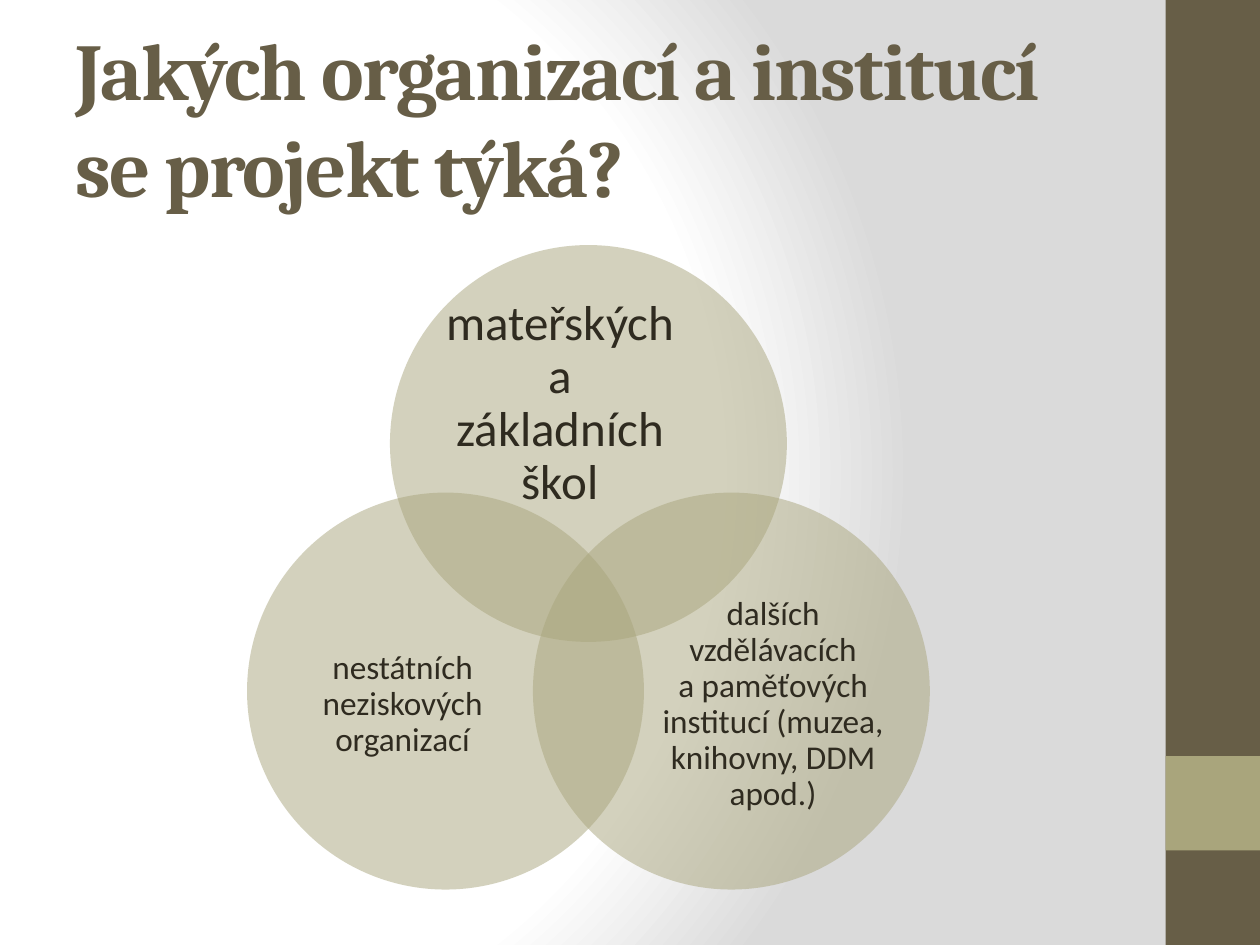
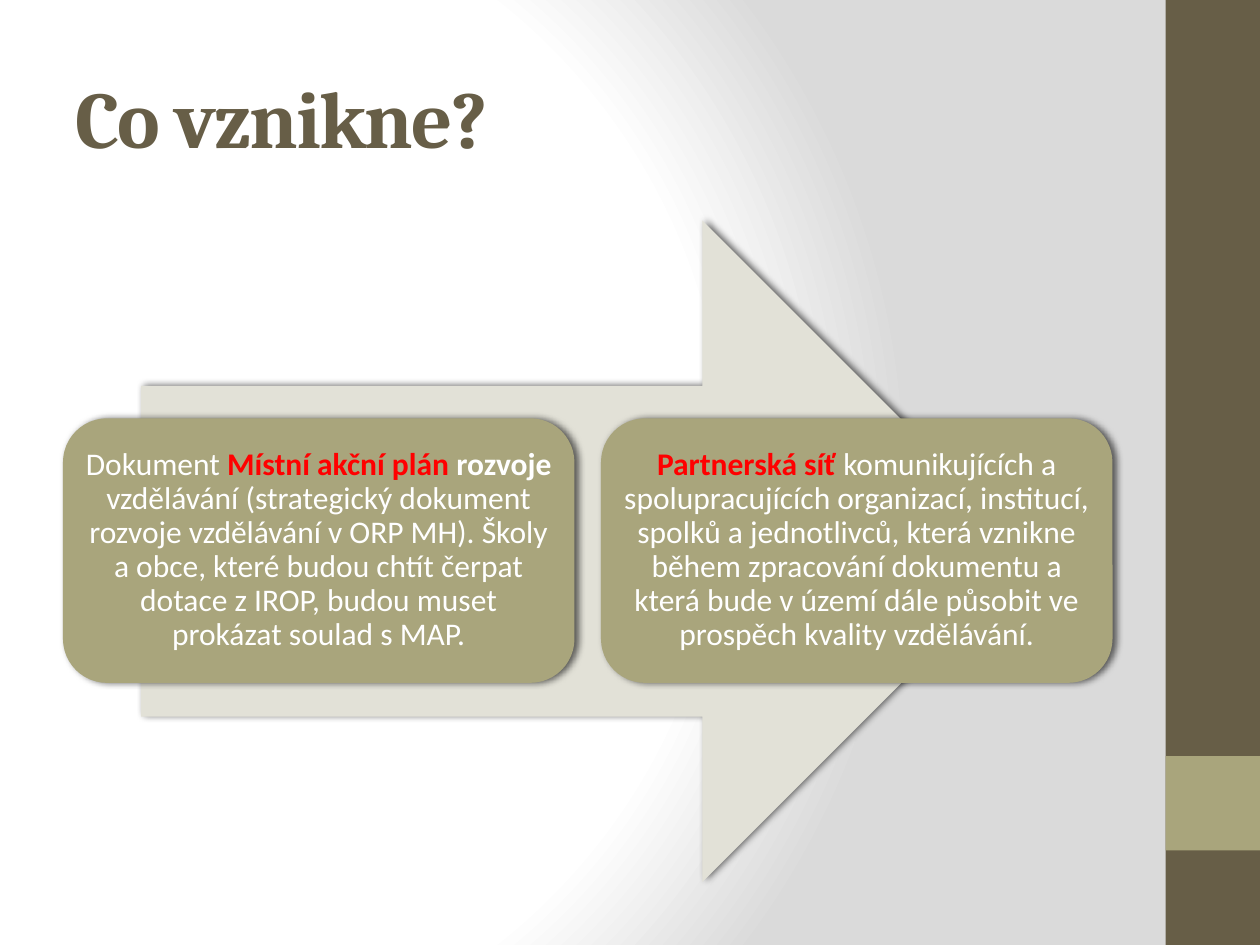
from math import cos, radians, sin

from lxml.etree import SubElement
from pptx import Presentation
from pptx.dml.color import RGBColor
from pptx.enum.shapes import MSO_SHAPE as Shape
from pptx.enum.text import MSO_ANCHOR as Anchor, PP_ALIGN as Align
from pptx.oxml.ns import qn
from pptx.util import Inches, Pt

COLORS = {
    "brown": "675E47", "olive": "A9A57C", "pale": "E2E1D7", "ink": "2F2B20",
    "white": "FFFFFF", "grey": "DADADA", "red": "FF0000", "black": "000000",
}
TITLE_FONT, BODY_FONT = "Cambria", "Calibri"


def color(name):
    return RGBColor.from_string(COLORS[name])


def child(parent, tag, **attributes):
    return SubElement(parent, qn(tag), {key: str(value) for key, value in attributes.items()})


# Shared page parts
def paint_background(page):
    page.background.fill.gradient()
    gradient = page.element.find(".//" + qn("a:gradFill"))
    for part in list(gradient):
        gradient.remove(part)
    stops = child(gradient, "a:gsLst")
    for percent, name in ((0, "white"), (75, "white"), (100, "grey")):
        stop = child(stops, "a:gs", pos=percent * 1000)
        child(stop, "a:srgbClr", val=COLORS[name])
    circle = child(gradient, "a:path", path="circle")
    child(circle, "a:fillToRect", l=20000, t=50000, r=100000, b=50000)


def add_page(deck, title):
    page = deck.slides.add_slide(deck.slide_layouts[6])
    paint_background(page)
    add_figure(page, Shape.RECTANGLE, (9.25, 0, 0.75, 7.5), "brown")
    add_figure(page, Shape.RECTANGLE, (9.25, 6, 0.75, 0.75), "olive")
    box = page.shapes.add_textbox(*map(Inches, (0.5, 0.3, 8.33, 1.25)))
    frame = box.text_frame
    frame.word_wrap = True
    frame.vertical_anchor = Anchor.MIDDLE
    span = add_span(frame.paragraphs[0], title, 46, "brown", True, TITLE_FONT)
    span.font._element.set("spc", "-100")
    return page


# Shapes and their effects
def add_figure(page, kind, place, fill, opacity=100, shadow=False):
    figure = page.shapes.add_shape(kind, *map(Inches, place))
    figure.shadow.inherit = False
    figure.fill.solid()
    figure.fill.fore_color.rgb = color(fill)
    figure.line.fill.background()
    properties = figure.element.spPr
    if opacity < 100:
        tint = properties.find(qn("a:solidFill") + "/" + qn("a:srgbClr"))
        child(tint, "a:alpha", val=opacity * 1000)
    if shadow:
        outer = child(properties.find(qn("a:effectLst")), "a:outerShdw",
                      blurRad=Pt(4), dist=Pt(2), dir=0, rotWithShape=0)
        child(child(outer, "a:srgbClr", val=COLORS["black"]), "a:alpha", val=60000)
    return figure


# Text
def add_span(para, text, size, tone, bold=False, font=BODY_FONT):
    span = para.add_run()
    span.text = text
    span.font.name = font
    span.font.size = Pt(size)
    span.font.bold = bold
    span.font.color.rgb = color(tone)
    return span


def set_up_frame(box, inset):
    frame = box.text_frame
    frame.word_wrap = True
    frame.vertical_anchor = Anchor.MIDDLE
    frame.margin_left = frame.margin_right = Inches(inset)
    frame.margin_top = frame.margin_bottom = Inches(inset)
    return frame


def style_para(para):
    para.alignment = Align.CENTER
    para.line_spacing = 0.9


def add_label(page, place, lines, size):
    frame = set_up_frame(page.shapes.add_textbox(*map(Inches, place)), 0)
    for number, (text, right_indent) in enumerate(lines):
        para = frame.add_paragraph() if number else frame.paragraphs[0]
        style_para(para)
        if right_indent:
            para._p.get_or_add_pPr().set("marR", str(Inches(right_indent)))
        add_span(para, text, size, "ink")


def add_card(page, place, spans):
    card = add_figure(page, Shape.ROUNDED_RECTANGLE, place, "olive", shadow=True)
    para = set_up_frame(card, 0.07).paragraphs[0]
    style_para(para)
    for text, tone, bold in spans:
        add_span(para, text, 18, tone, bold)


# Slides
def build_organisations(deck):
    page = add_page(deck, "Jakých organizací a institucí se projekt týká?")
    center_x, center_y, orbit, diameter = 4.67, 4.83, 1.31, 3.15
    circles = [
        (-90, (3.51, 2.5, 2.31, 1.42), 28,
         [("mateřských", 0.44), ("a základních škol", 0)]),
        (30, (5.19, 4.73, 1.89, 1.73), 19,
         [("dalších vzdělávacích", 0),
          ("a paměťových institucí (muzea, knihovny, DDM apod.)", 0)]),
        (150, (2.25, 4.73, 1.89, 1.73), 19,
         [("nestátních neziskových organizací", 0)]),
    ]
    for angle, label_place, size, lines in circles:
        left = center_x + orbit * cos(radians(angle)) - diameter / 2
        top = center_y + orbit * sin(radians(angle)) - diameter / 2
        add_figure(page, Shape.OVAL, (left, top, diameter, diameter), "olive", opacity=50)
        add_label(page, label_place, lines, size)


def build_outcomes(deck):
    page = add_page(deck, "Co vznikne?")
    add_figure(page, Shape.RIGHT_ARROW, (1.12, 1.75, 7.08, 5.25), "pale", shadow=True)
    outcomes = [
        [("Dokument ", "white", False),
         ("Místní akční plán ", "red", True),
         ("rozvoje ", "white", True),
         ("vzdělávání (strategický dokument rozvoje vzdělávání v ORP MH). "
          "Školy a obce, které budou chtít čerpat dotace z IROP, budou muset "
          "prokázat soulad s MAP.", "white", False)],
        [("Partnerská síť ", "red", True),
         ("komunikujících a spolupracujících organizací, institucí, spolků "
          "a jednotlivců, která vznikne během zpracování dokumentu a která bude "
          "v území dále působit ve prospěch kvality vzdělávání.", "white", False)],
    ]
    width, gap = 4.06, 0.21
    for number, spans in enumerate(outcomes):
        add_card(page, (0.5 + number * (width + gap), 3.32, width, 2.1), spans)


def main():
    deck = Presentation()
    deck.slide_width, deck.slide_height = Inches(10), Inches(7.5)
    build_organisations(deck)
    build_outcomes(deck)
    deck.save("out.pptx")


if __name__ == "__main__":
    main()
